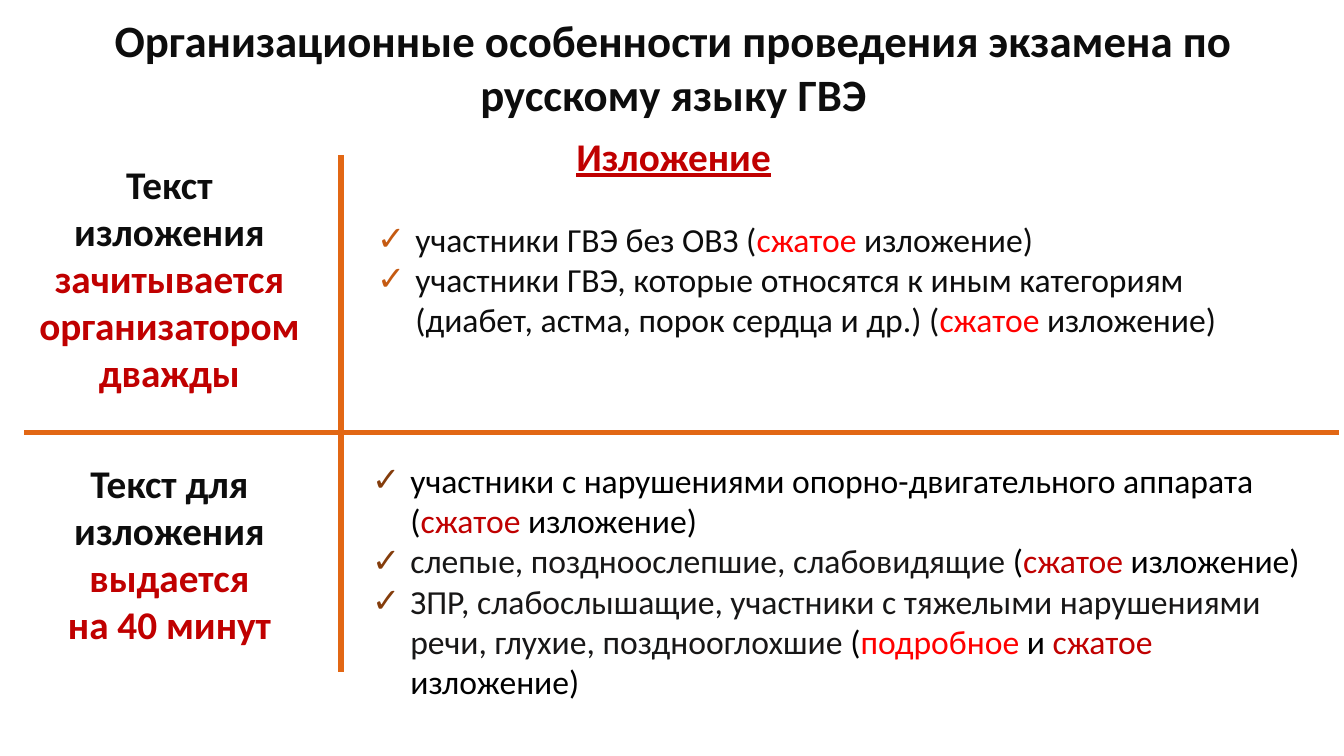
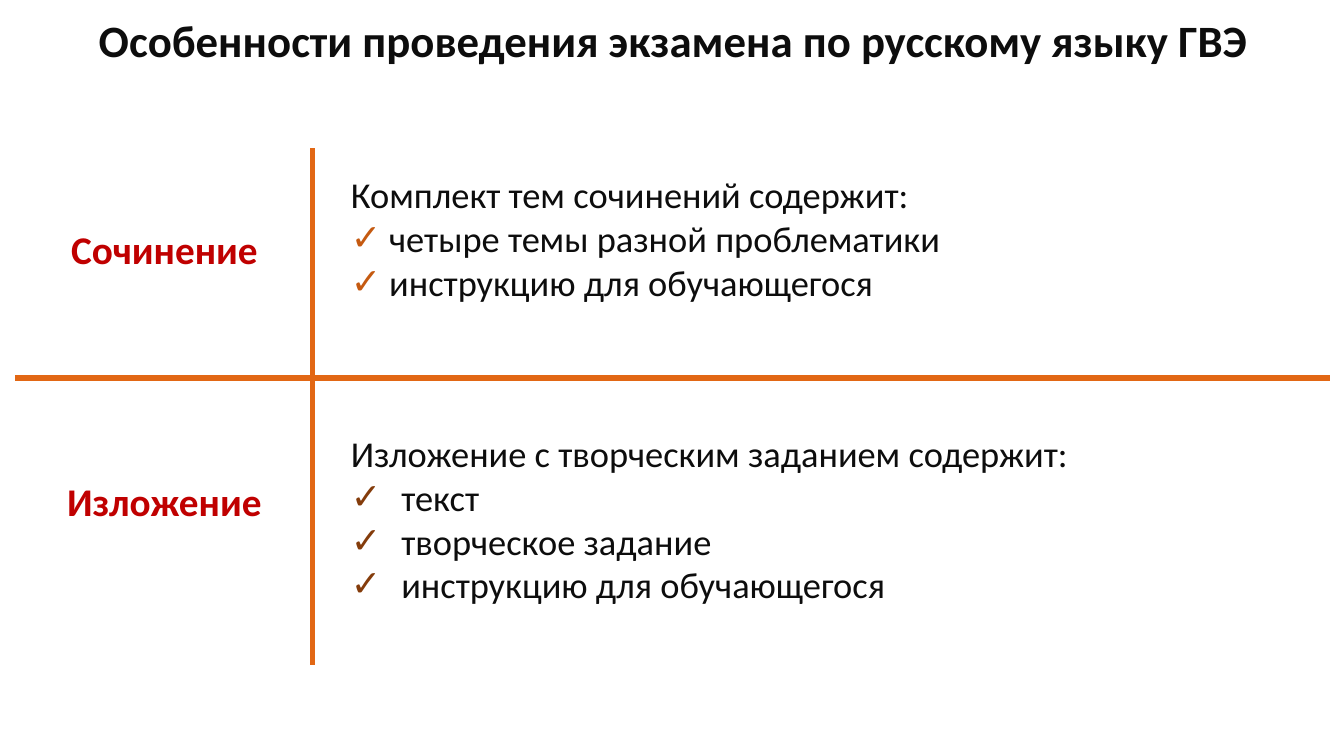
import pptx
import pptx.dml.color
import pptx.enum.shapes
import pptx.enum.text
import pptx.oxml
import pptx.oxml.ns
import pptx.util
from pptx.util import Inches

RGBColor = pptx.dml.color.RGBColor
PP_ALIGN = pptx.enum.text.PP_ALIGN

INK = RGBColor(0x0D, 0x0D, 0x0D)
BLACK = RGBColor(0x00, 0x00, 0x00)
SOFT_BLACK = RGBColor(0x18, 0x17, 0x17)
DARK_RED = RGBColor(0xC0, 0x00, 0x00)
RED = RGBColor(0xFF, 0x00, 0x00)
ORANGE = RGBColor(0xE2, 0x67, 0x14)
TICK_ORANGE = RGBColor(0xC5, 0x5A, 0x11)
TICK_BROWN = RGBColor(0x84, 0x3C, 0x0B)

FONT = "Calibri"
TWO_CONTENT_LAYOUT = 3
LEFT = 0.24
AXIS_WIDTH = 13.04
AXIS_HEIGHT = 5.13
TITLE_FORMAT = {"size": pptx.util.Pt(32), "bold": True}
LABEL_FORMAT = {"size": pptx.util.Pt(28), "bold": True}
HEADING_FORMAT = {**LABEL_FORMAT, "underline": True}


def list_format(size):
    return {"size": pptx.util.Pt(size), "bold": False}


def place(box, left, top, width, height):
    box.left, box.top = Inches(left), Inches(top)
    box.width, box.height = Inches(width), Inches(height)


def write(box, paragraphs, text_format, alignment):
    frame = box.text_frame
    frame.word_wrap = True
    frame.auto_size = pptx.enum.text.MSO_AUTO_SIZE.NONE
    frame.vertical_anchor = pptx.enum.text.MSO_ANCHOR.TOP
    for number, spans in enumerate(paragraphs):
        para = frame.paragraphs[0] if number == 0 else frame.add_paragraph()
        para.alignment = alignment
        para.space_before = pptx.util.Pt(0)
        for text, color in spans:
            span = para.add_run()
            span.text = text
            span.font.name = FONT
            span.font.color.rgb = color
            for name, value in text_format.items():
                setattr(span.font, name, value)


def set_bullet(para, color, indent):
    properties = para._p.get_or_add_pPr()
    properties.set("marL", str(Inches(indent)))
    properties.set("indent", str(-Inches(indent)))
    namespace = pptx.oxml.ns.nsdecls("a")
    if indent:
        marks = [
            f'<a:buClr {namespace}><a:srgbClr val="{color}"/></a:buClr>',
            f'<a:buChar {namespace} char="✓"/>',
        ]
    else:
        marks = [f"<a:buNone {namespace}/>"]
    for mark in marks:
        properties.append(pptx.oxml.parse_xml(mark))


def add_label(page, top, height, paragraphs, left=LEFT, width=2.78, text_format=LABEL_FORMAT):
    box = page.shapes.add_textbox(Inches(left), Inches(top), Inches(width), Inches(height))
    write(box, paragraphs, text_format, PP_ALIGN.CENTER)


def fill_list(page, index, area, paragraphs, size, tick, indent=0.38, intro=False):
    box = page.placeholders[index]
    place(box, *area)
    write(box, paragraphs, list_format(size), PP_ALIGN.LEFT)
    for number, para in enumerate(box.text_frame.paragraphs):
        set_bullet(para, tick, 0 if intro and number == 0 else indent)


def add_line(page, left, top, width, height):
    line = page.shapes.add_connector(
        pptx.enum.shapes.MSO_CONNECTOR.STRAIGHT,
        Inches(left), Inches(top), Inches(left + width), Inches(top + height),
    )
    line.line.color.rgb = ORANGE
    line.line.width = pptx.util.Pt(4)
    effects = f'<a:effectLst {pptx.oxml.ns.nsdecls("a")}/>'
    line._element.spPr.append(pptx.oxml.parse_xml(effects))


def add_page(deck, title, title_height, row_left, row_top, column_left, column_top):
    page = deck.slides.add_slide(deck.slide_layouts[TWO_CONTENT_LAYOUT])
    place(page.shapes.title, LEFT, 0.08, 12.88, title_height)
    write(page.shapes.title, [[(title, INK)]], TITLE_FORMAT, PP_ALIGN.CENTER)
    add_line(page, row_left, row_top, AXIS_WIDTH, 0)
    add_line(page, column_left, column_top, 0, AXIS_HEIGHT)
    return page


def build_retelling(deck):
    page = add_page(
        deck, "Организационные особенности проведения экзамена по русскому языку ГВЭ",
        1.18, 0.24, 4.29, 3.38, 1.54,
    )
    add_label(page, 1.26, 0.57, [[("Изложение", DARK_RED)]], left=5.29, text_format=HEADING_FORMAT)
    add_label(page, 1.54, 2.46, [
        [("Текст изложения ", INK), ("зачитывается организатором дважды", DARK_RED)],
    ], width=2.88)
    add_label(page, 4.51, 1.99, [
        [("Текст для изложения ", INK), ("выдается", DARK_RED)],
        [("на 40 минут", DARK_RED)],
    ], width=2.88)
    fill_list(page, 1, (3.64, 2.12, 9.11, 1.31), [
        [("участники ГВЭ без ОВЗ (", INK), ("сжатое", RED), (" изложение)", INK)],
        [
            ("участники ГВЭ, которые относятся к иным категориям "
             "(диабет, астма, порок сердца и др.) (", INK),
            ("сжатое ", RED), ("изложение)", INK),
        ],
    ], 24, TICK_ORANGE)
    concise = [("сжатое", DARK_RED), (" изложение)", BLACK)]
    fill_list(page, 2, (3.59, 4.51, 9.53, 2.52), [
        [("участники с нарушениями опорно-двигательного аппарата (", BLACK), *concise],
        [("слепые, поздноослепшие, слабовидящие ", SOFT_BLACK), ("(", BLACK), *concise],
        [
            ("ЗПР, слабослышащие, участники с тяжелыми нарушениями речи, "
             "глухие, позднооглохшие ", SOFT_BLACK),
            ("(", BLACK), ("подробное", RED), (" и ", BLACK), *concise,
        ],
    ], 24, TICK_BROWN)


def build_contents(deck):
    page = add_page(
        deck, "Особенности проведения экзамена по русскому языку ГВЭ",
        0.64, 0.15, 3.75, 3.1, 1.47,
    )
    for top, label in ((2.19, "Сочинение"), (4.69, "Изложение")):
        add_label(page, top, 0.57, [[(label, DARK_RED)]])
    essay = (
        "Комплект тем сочинений содержит:",
        "четыре темы разной проблематики",
        "инструкцию для обучающегося",
    )
    retelling = (
        "Изложение с творческим заданием содержит:",
        "текст",
        "творческое задание",
        "инструкцию для обучающегося",
    )
    for index, top, height, texts, tick, indent in (
        (1, 1.66, 1.41, essay, TICK_ORANGE, 0.38),
        (2, 4.23, 1.85, retelling, TICK_BROWN, 0.5),
    ):
        paragraphs = [[(text, INK)] for text in texts]
        fill_list(page, index, (3.38, top, 9.53, height), paragraphs, 26, tick, indent, intro=True)


def main():
    deck = pptx.Presentation()
    deck.slide_width, deck.slide_height = Inches(13.33), Inches(7.5)
    build_retelling(deck)
    build_contents(deck)
    deck.save("out.pptx")


if __name__ == "__main__":
    main()
